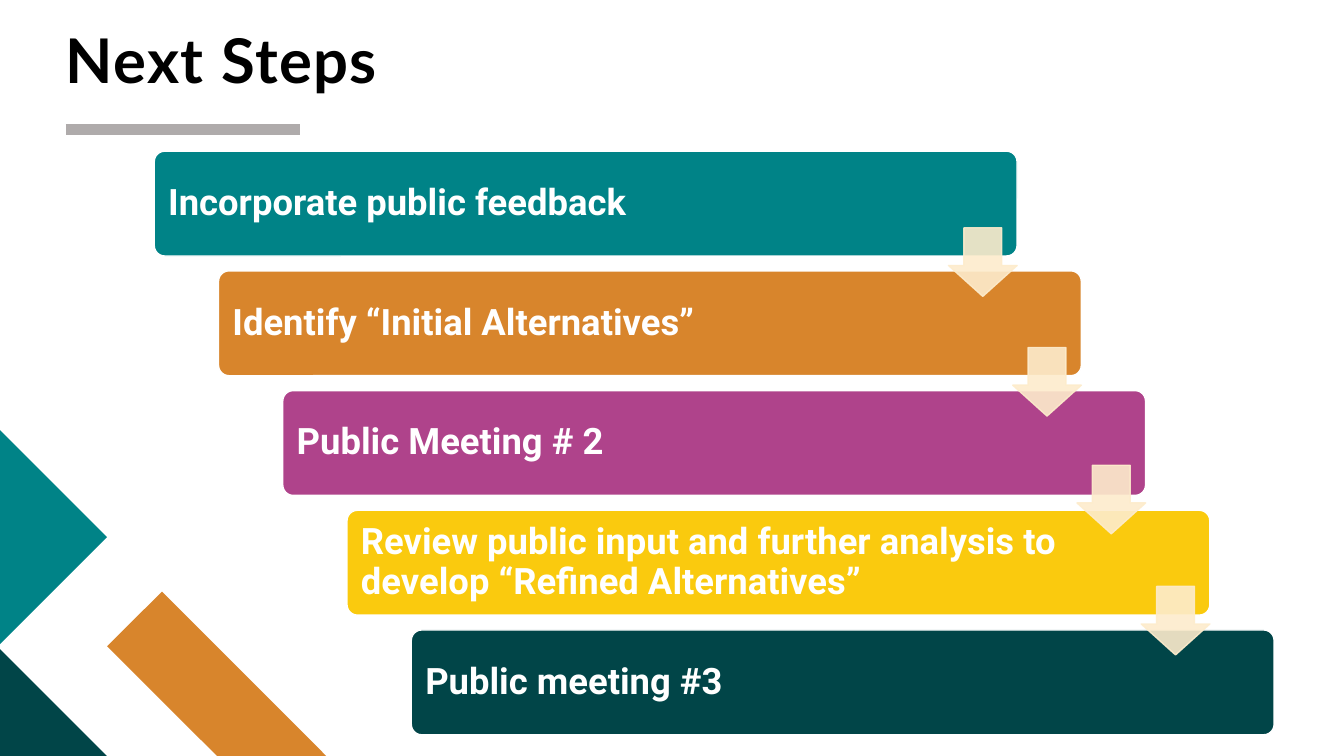
from dataclasses import dataclass

from lxml.etree import SubElement
from pptx import Presentation
from pptx.dml.color import RGBColor
from pptx.enum.shapes import MSO_CONNECTOR, MSO_SHAPE
from pptx.enum.text import MSO_ANCHOR, PP_ALIGN
from pptx.oxml.ns import qn
from pptx.shapes.autoshape import Shape
from pptx.slide import Slide
from pptx.text.text import TextFrame
from pptx.util import Pt

TEAL = RGBColor(0x00, 0x83, 0x87)
ORANGE = RGBColor(0xD8, 0x85, 0x2C)
PURPLE = RGBColor(0xAF, 0x43, 0x8B)
YELLOW = RGBColor(0xFA, 0xCA, 0x0E)
DARK = RGBColor(0x01, 0x45, 0x48)
CREAM = RGBColor(0xFD, 0xEC, 0xCC)
GRAY = RGBColor(0xAF, 0xAB, 0xAB)
WHITE = RGBColor(0xFF, 0xFF, 0xFF)
BLACK = RGBColor(0x00, 0x00, 0x00)

WIDE, HIGH = 960, 540
LEFT, TOP = 110.2, 108
BAR_W, BAR_H = 616.3, 74.9
STEP_X, STEP_Y = 45.9, 85.5
ARROW = 49


@dataclass
class Step:
    text: str
    fill: RGBColor
    drop: float = 0  # from bar top to arrow top; 0 means no arrow


@dataclass
class Patch:
    fill: RGBColor
    points: list[tuple[float, float]]


STEPS = [
    Step("Incorporate public feedback", TEAL, 54.7),
    Step("Identify “Initial Alternatives”", ORANGE, 54.7),
    Step("Public Meeting # 2", PURPLE, 53.3),
    Step("Review public input and further analysis to develop “Refined Alternatives”",
         YELLOW, 54.3),
    Step("Public meeting #3", DARK),
]

PATCHES = [
    Patch(ORANGE, [(233, HIGH), (155, HIGH), (76.5, 461.7), (115.7, 422.6)]),
    Patch(DARK, [(76.4, HIGH), (0, HIGH), (0, 463.6)]),
    Patch(TEAL, [(0, 307.2), (76.5, 383.7), (0, 460.2)]),
]


def write(frame: TextFrame, text: str, *, font: str, size: float, color: RGBColor,
          anchor: MSO_ANCHOR, lines: float, inset: float = 0, right: float = 0,
          spread: int = 0) -> None:
    frame.word_wrap = True
    frame.vertical_anchor = anchor
    frame.margin_left = frame.margin_top = frame.margin_bottom = Pt(inset)
    frame.margin_right = Pt(right)
    para = frame.paragraphs[0]
    para.alignment = PP_ALIGN.LEFT
    para.line_spacing = lines
    run = para.add_run()
    run.text = text
    run.font.name = font
    run.font.size = Pt(size)
    run.font.bold = True
    run.font.color.rgb = color
    if spread:
        run.font._element.set("spc", str(spread))


def paint(shape: Shape, fill: RGBColor, line: RGBColor | None = None) -> None:
    shape.shadow.inherit = False
    shape.fill.solid()
    shape.fill.fore_color.rgb = fill
    if line is None:
        shape.line.fill.background()
    else:
        shape.line.color.rgb = line
        shape.line.width = Pt(1)


def fade(shape: Shape, share: int) -> None:
    for color in shape._element.spPr.iter(qn("a:srgbClr")):
        SubElement(color, qn("a:alpha")).set("val", str(share * 1000))


def add_patch(slide: Slide, patch: Patch) -> None:
    first, *rest = patch.points
    pen = slide.shapes.build_freeform(Pt(first[0]), Pt(first[1]))
    pen.add_line_segments([(Pt(x), Pt(y)) for x, y in rest], close=True)
    paint(pen.convert_to_shape(), patch.fill)


def add_bar(slide: Slide, step: Step, left: float, top: float) -> None:
    bar = slide.shapes.add_shape(MSO_SHAPE.ROUNDED_RECTANGLE, Pt(left), Pt(top),
                                 Pt(BAR_W), Pt(BAR_H))
    bar.adjustments[0] = 0.1
    paint(bar, step.fill, WHITE)
    write(bar.text_frame, step.text, font="Roboto", size=26, color=WHITE,
          anchor=MSO_ANCHOR.MIDDLE, lines=0.9, inset=7.8, right=102)


def add_arrow(slide: Slide, left: float, top: float) -> None:
    arrow = slide.shapes.add_shape(MSO_SHAPE.DOWN_ARROW, Pt(left), Pt(top),
                                   Pt(ARROW), Pt(ARROW))
    arrow.adjustments[0] = 0.55
    arrow.adjustments[1] = 0.45
    paint(arrow, CREAM, CREAM)
    fade(arrow, 90)


def main() -> None:
    deck = Presentation()
    deck.slide_width, deck.slide_height = Pt(WIDE), Pt(HIGH)
    slide = deck.slides.add_slide(deck.slide_layouts[6])

    # Rule under the title
    rule = slide.shapes.add_connector(MSO_CONNECTOR.STRAIGHT, Pt(47), Pt(92.8),
                                      Pt(214.6), Pt(92.8))
    rule.line.color.rgb = GRAY
    rule.line.width = Pt(8)
    SubElement(rule._element.spPr, qn("a:effectLst"))

    # Corner shapes
    for patch in PATCHES:
        add_patch(slide, patch)

    # Title
    title = slide.shapes.add_textbox(Pt(47), Pt(8), Pt(856), Pt(60))
    write(title.text_frame, "Next Steps", font="Lato", size=44, color=BLACK,
          anchor=MSO_ANCHOR.BOTTOM, lines=0.8, spread=100)

    # Staircase of steps, then the arrows on top
    spots = [(step, LEFT + i * STEP_X, TOP + i * STEP_Y) for i, step in enumerate(STEPS)]
    for step, left, top in spots:
        add_bar(slide, step, left, top)
    for step, left, top in spots:
        if step.drop:
            add_arrow(slide, left + BAR_W - ARROW, top + step.drop)

    deck.save("out.pptx")


if __name__ == "__main__":
    main()
